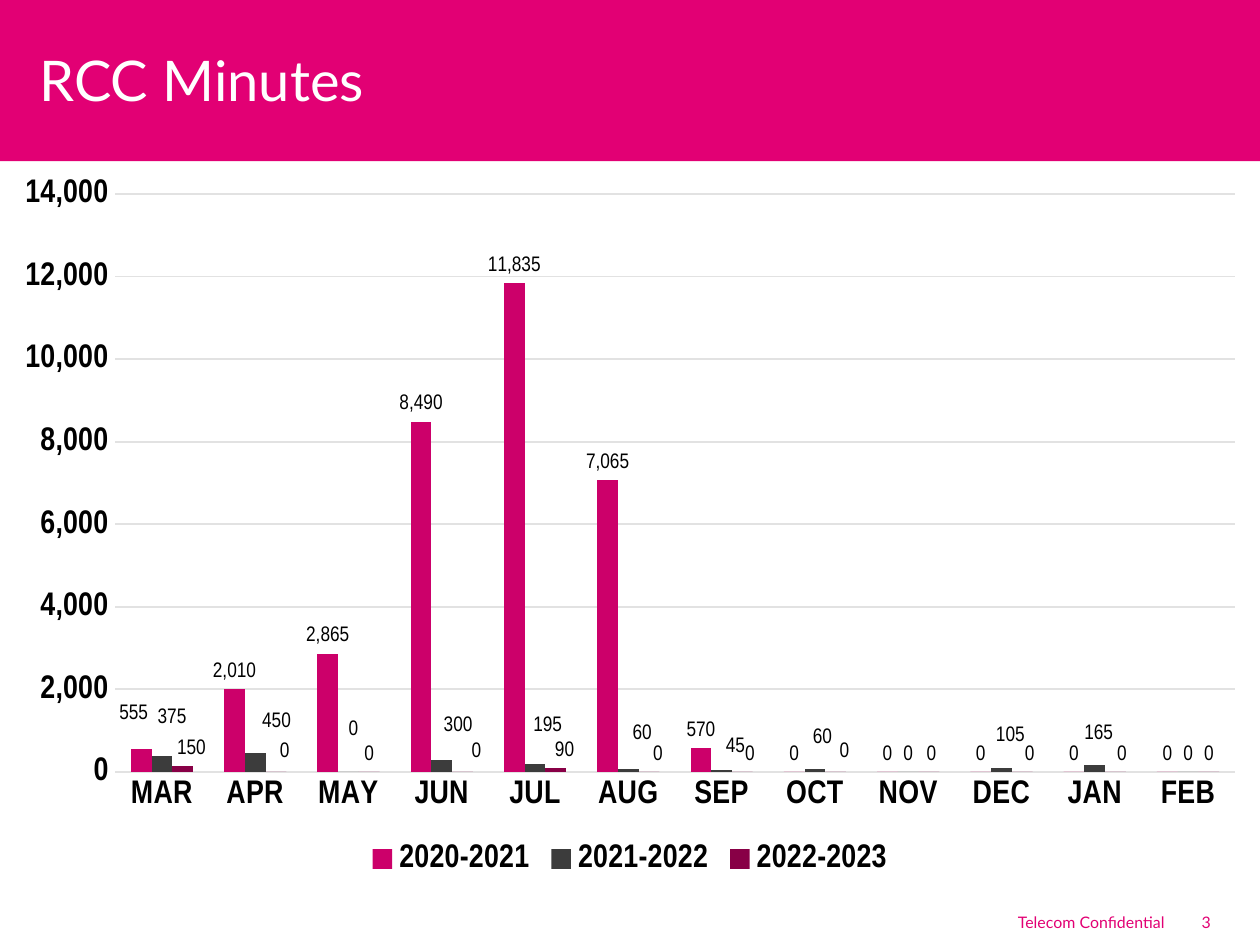
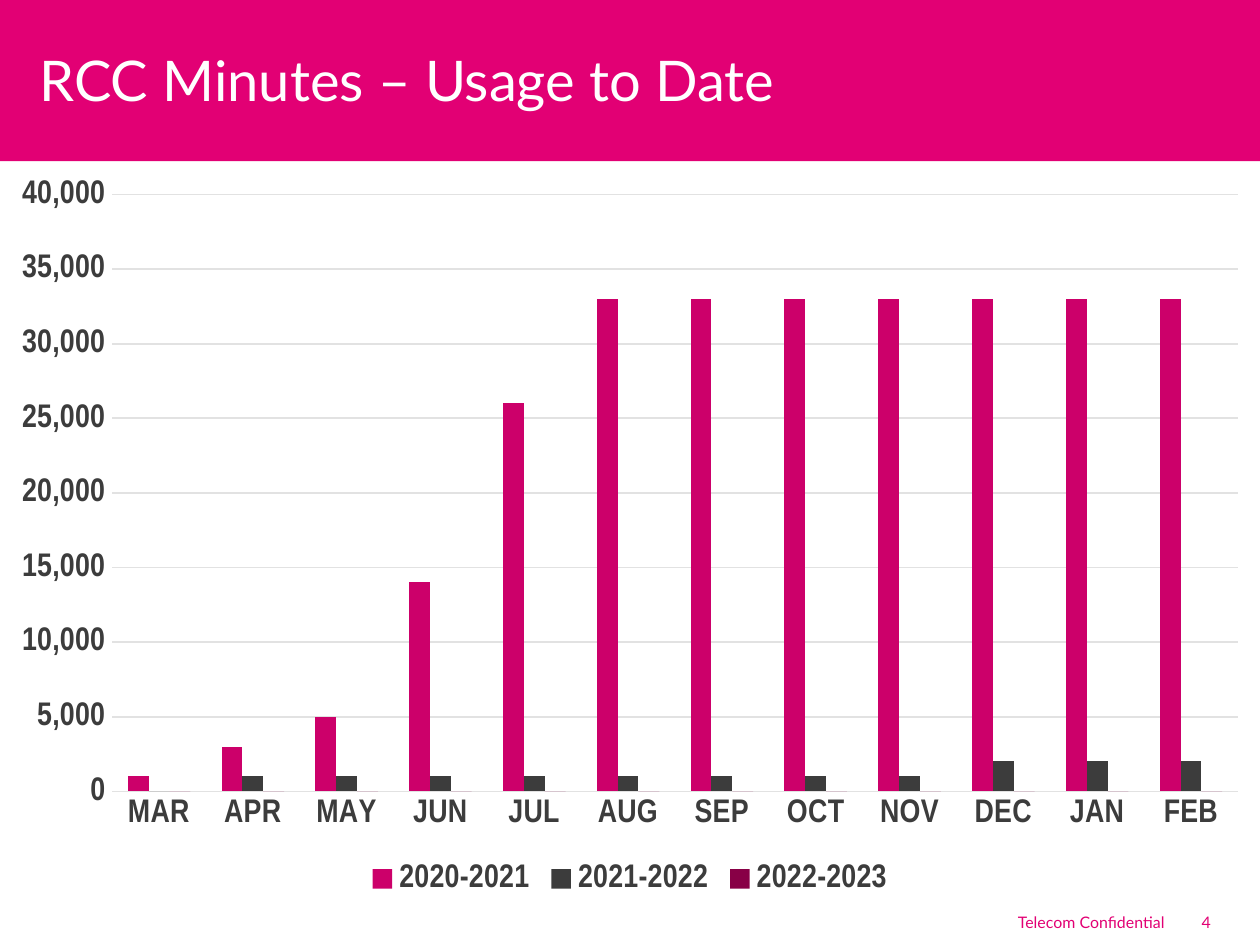
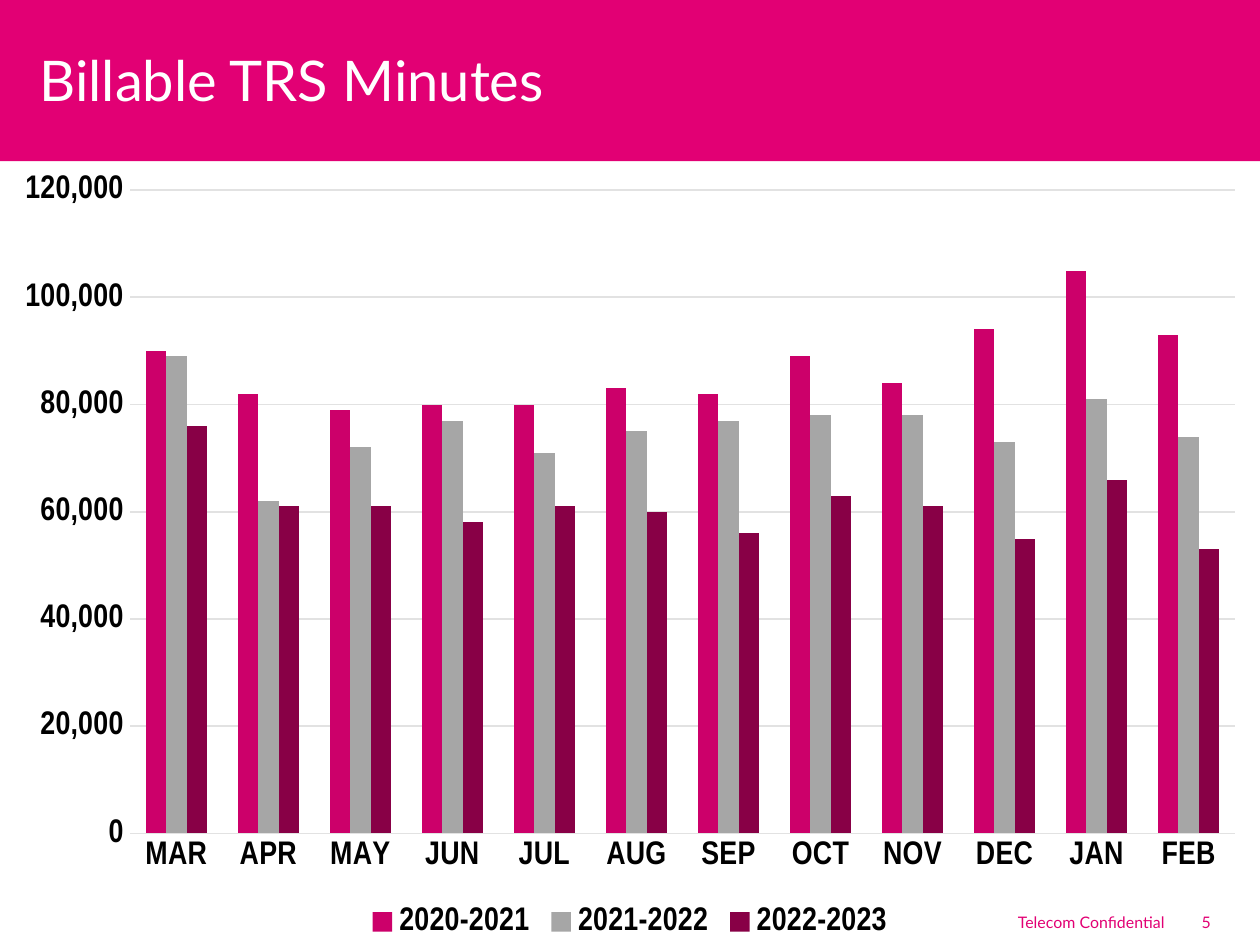
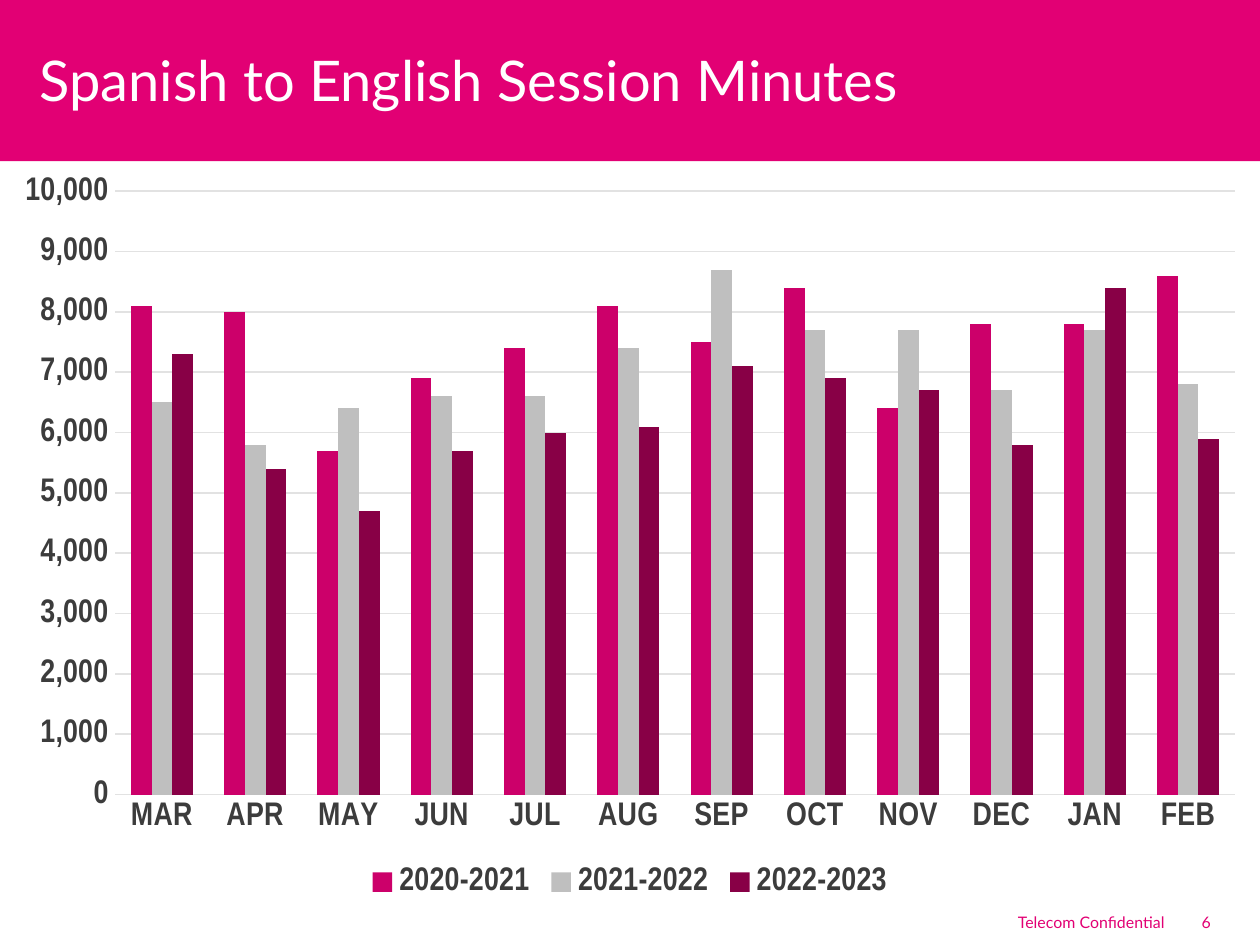
"""Build four slides of monthly relay minutes, each a banded title over a column chart."""
import dataclasses
import itertools

import lxml.etree
import pptx
import pptx.chart.data
import pptx.dml.color
import pptx.enum.chart
import pptx.enum.shapes
import pptx.enum.text
import pptx.oxml.ns
import pptx.util

Cm = pptx.util.Cm
Pt = pptx.util.Pt

PINK, WHITE, BLACK, DARK = "E20074", "FFFFFF", "000000", "3C3C3C"
ROSE, WINE, GRID = "CC006A", "880046", "E2E2E2"
SANS, THIN = "Lato", "Arial Narrow"
WIDE, HIGH = 19.05, 14.29
COMMA = "#,##0"
MONTHS = "MAR APR MAY JUN JUL AUG SEP OCT NOV DEC JAN FEB".split()
YEARS = ("2020-2021", "2021-2022", "2022-2023")

Rows = tuple[list[int], ...]
Shifts = tuple[dict[int, tuple[int, int]], ...]


@dataclasses.dataclass(frozen=True)
class Box:
    left: float
    top: float
    width: float
    height: float

    def cm(self) -> tuple:
        return Cm(self.left), Cm(self.top), Cm(self.width), Cm(self.height)


@dataclasses.dataclass(frozen=True)
class Label:
    box: Box
    size: float
    color: str
    inset: tuple[float, float]
    align: pptx.enum.text.PP_ALIGN = pptx.enum.text.PP_ALIGN.LEFT


@dataclasses.dataclass(frozen=True)
class Page:
    title: str
    box: Box
    rows: Rows
    top: int
    step: int
    ink: str
    middle: str
    format: str = COMMA
    shifts: Shifts = ()


BAND = Box(0, 0, WIDE, 2.44)
TITLE = Label(Box(0.4, 0.43, 18.29, 1.52), 24, WHITE, (0.2, 0.1))
FOOTER = Label(Box(11.71, 13.73, 6.05, 0.43), 6.8, PINK, (0.15, 0.08),
               pptx.enum.text.PP_ALIGN.RIGHT)
NUMBER = Label(Box(18.02, 13.73, 0.97, 0.43), 6.8, PINK, (0.15, 0.08))

RCC: Rows = (
    [555, 2010, 2865, 8490, 11835, 7065, 570, 0, 0, 0, 0, 0],
    [375, 450, 0, 300, 195, 60, 45, 60, 0, 105, 165, 0],
    [150, 0, 0, 0, 90, 0, 0, 0, 0, 0, 0, 0],
)
RCC_SHIFTS: Shifts = (
    {0: (-6, -25)},
    {0: (8, -29), 1: (17, -20), 2: (4, -35), 3: (13, -22), 4: (10, -28),
     5: (11, -25), 6: (11, -8), 7: (6, -19), 9: (7, -20), 10: (3, -19)},
    {0: (7, 1), 1: (7, -4), 3: (11, -4), 4: (7, 0), 5: (7, 0),
     6: (6, 0), 7: (7, -4), 8: (2, 0), 9: (6, 0), 10: (5, 0)},
)
TRS: Rows = (
    [90000, 82000, 79000, 80000, 80000, 83000, 82000, 89000, 84000, 94000, 105000, 93000],
    [89000, 62000, 72000, 77000, 71000, 75000, 77000, 78000, 78000, 73000, 81000, 74000],
    [76000, 61000, 61000, 58000, 61000, 60000, 56000, 63000, 61000, 55000, 66000, 53000],
)
SPANISH: Rows = (
    [8100, 8000, 5700, 6900, 7400, 8100, 7500, 8400, 6400, 7800, 7800, 8600],
    [6500, 5800, 6400, 6600, 6600, 7400, 8700, 7700, 7700, 6700, 7700, 6800],
    [7300, 5400, 4700, 5700, 6000, 6100, 7100, 6900, 6700, 5800, 8400, 5900],
)
TO_DATE: Rows = tuple([round(sum_, -3) for sum_ in itertools.accumulate(row)] for row in RCC)

PAGES = (
    Page("RCC Minutes", Box(0, 2.48, WIDE, 10.85), RCC, 14000, 2000, BLACK, DARK,
         shifts=RCC_SHIFTS),
    Page("RCC Minutes – Usage to Date", Box(-0.05, 2.48, 19.15, 11.15), TO_DATE,
         40000, 5000, DARK, DARK),
    Page("Billable TRS Minutes", Box(0, 2.4, WIDE, 11.88), TRS, 120000, 20000,
         BLACK, "A6A6A6", "#,##0;[Red]#,##0"),
    Page("Spanish to English Session Minutes", Box(0, 2.43, WIDE, 11.25), SPANISH,
         10000, 1000, DARK, "BFBFBF"),
)


def rgb(color: str) -> pptx.dml.color.RGBColor:
    return pptx.dml.color.RGBColor.from_string(color)


def set_font(font, size: float, color: str, name: str, bold: bool = False) -> None:
    font.size = Pt(size)
    font.name = name
    font.bold = bold
    font.color.rgb = rgb(color)


def add_label(slide, label: Label, text: str) -> None:
    frame = slide.shapes.add_textbox(*label.box.cm()).text_frame
    frame.word_wrap = True
    frame.vertical_anchor = pptx.enum.text.MSO_ANCHOR.MIDDLE
    frame.margin_left = frame.margin_right = Cm(label.inset[0])
    frame.margin_top = frame.margin_bottom = Cm(label.inset[1])
    line = frame.paragraphs[0]
    line.alignment = label.align
    run = line.add_run()
    run.text = text
    set_font(run.font, label.size, label.color, SANS)


def add_frame(slide, title: str, number: int) -> None:
    band = slide.shapes.add_shape(pptx.enum.shapes.MSO_SHAPE.RECTANGLE, *BAND.cm())
    band.shadow.inherit = False
    band.fill.solid()
    band.fill.fore_color.rgb = rgb(PINK)
    band.line.fill.background()
    add_label(slide, TITLE, title)
    add_label(slide, FOOTER, "Telecom Confidential")
    add_label(slide, NUMBER, str(number))


def clear_back(chart) -> None:
    root = chart.element
    qn = pptx.oxml.ns.qn
    back = lxml.etree.Element(qn("c:spPr"))
    lxml.etree.SubElement(back, qn("a:noFill"))
    edge = lxml.etree.SubElement(back, qn("a:ln"))
    lxml.etree.SubElement(edge, qn("a:noFill"))
    root.find(qn("c:chart")).addnext(back)


def style_axis(axis, ink: str) -> None:
    axis.major_tick_mark = axis.minor_tick_mark = pptx.enum.chart.XL_TICK_MARK.NONE
    axis.format.line.fill.background()
    set_font(axis.tick_labels.font, 14, ink, THIN, True)


def add_values(row, shifts: dict[int, tuple[int, int]]) -> None:
    qn = pptx.oxml.ns.qn
    above = pptx.enum.chart.XL_LABEL_POSITION.OUTSIDE_END
    labels = row.data_labels
    labels.show_value = True
    labels.number_format = COMMA
    labels.number_format_is_linked = False
    labels.position = above
    set_font(labels.font, 9, BLACK, THIN)
    for leader in row._element.xpath("c:dLbls/c:showLeaderLines"):
        leader.set("val", "0")
    for index, shift in shifts.items():
        label = row.points[index].data_label
        label.position = above
        set_font(label.font, 9, BLACK, THIN)
        node = row._element.xpath(f"c:dLbls/c:dLbl[c:idx/@val='{index}']")[0]
        layout = lxml.etree.Element(qn("c:layout"))
        place = lxml.etree.SubElement(layout, qn("c:manualLayout"))
        for side, part in zip("xy", shift):
            lxml.etree.SubElement(place, qn(f"c:{side}")).set("val", str(part / 1000))
        node.find(qn("c:idx")).addnext(layout)


def add_chart(slide, page: Page) -> None:
    data = pptx.chart.data.CategoryChartData(number_format=COMMA)
    data.categories = MONTHS
    for year, row in zip(YEARS, page.rows):
        data.add_series(year, row)
    kind = pptx.enum.chart.XL_CHART_TYPE.COLUMN_CLUSTERED
    chart = slide.shapes.add_chart(kind, *page.box.cm(), data).chart
    set_font(chart.font, 10, DARK, SANS)
    clear_back(chart)
    chart.has_title = False
    chart.has_legend = True
    chart.legend.position = pptx.enum.chart.XL_LEGEND_POSITION.BOTTOM
    chart.legend.include_in_layout = False
    set_font(chart.legend.font, 14, page.ink, THIN, True)

    style_axis(chart.category_axis, page.ink)
    scale = chart.value_axis
    style_axis(scale, page.ink)
    scale.minimum_scale, scale.maximum_scale = 0, page.top
    scale.major_unit = page.step
    scale.tick_labels.number_format = page.format
    scale.tick_labels.number_format_is_linked = False
    scale.has_major_gridlines = True
    scale.major_gridlines.format.line.color.rgb = rgb(GRID)
    scale.major_gridlines.format.line.width = Pt(0.75)

    plot = chart.plots[0]
    plot.gap_width, plot.overlap = 150, 0
    plot.vary_by_categories = False
    for row, color in zip(plot.series, (ROSE, page.middle, WINE)):
        row.format.fill.solid()
        row.format.fill.fore_color.rgb = rgb(color)
    for row, shifts in zip(plot.series, page.shifts):
        add_values(row, shifts)


def main() -> None:
    deck = pptx.Presentation()
    deck.slide_width, deck.slide_height = Cm(WIDE), Cm(HIGH)
    for number, page in enumerate(PAGES, 3):
        slide = deck.slides.add_slide(deck.slide_layouts[6])
        add_frame(slide, page.title, number)
        add_chart(slide, page)
    deck.save("out.pptx")


if __name__ == "__main__":
    main()
